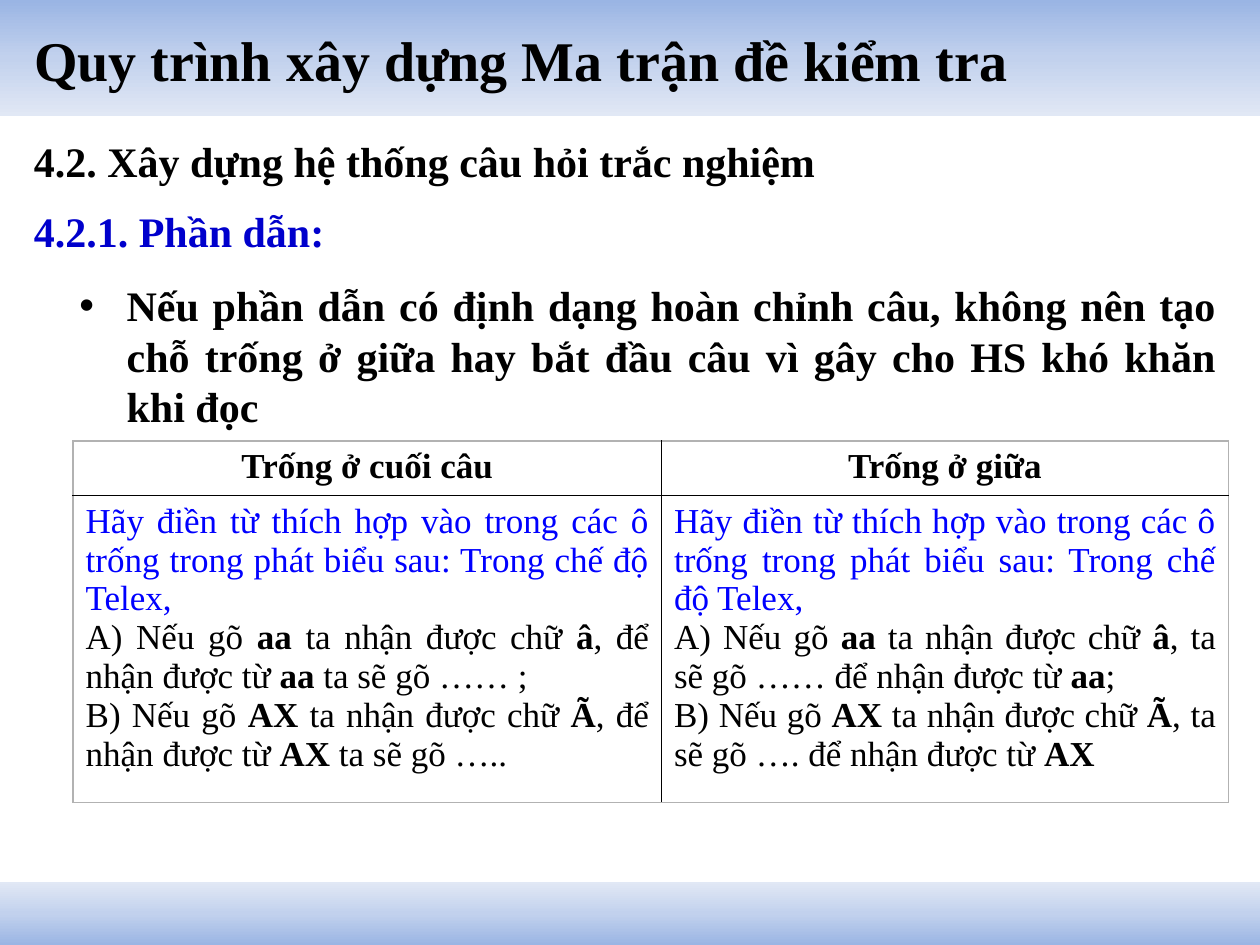
from copy import deepcopy
from dataclasses import dataclass

from lxml import etree
from pptx import Presentation
from pptx.dml.color import RGBColor
from pptx.enum.shapes import MSO_SHAPE
from pptx.enum.text import MSO_ANCHOR, MSO_AUTO_SIZE, PP_ALIGN
from pptx.oxml.ns import qn
from pptx.util import Inches, Pt

RECTANGLE = MSO_SHAPE.RECTANGLE
MIDDLE = MSO_ANCHOR.MIDDLE
NO_FIT = MSO_AUTO_SIZE.NONE
LEFT, CENTER, JUSTIFY = PP_ALIGN.LEFT, PP_ALIGN.CENTER, PP_ALIGN.JUSTIFY

FONT = "Times New Roman"
BLACK = RGBColor(0x00, 0x00, 0x00)
HEADING_BLUE = RGBColor(0x00, 0x00, 0xCC)
PROMPT_BLUE = RGBColor(0x00, 0x00, 0xFF)
FRAME_GRAY = RGBColor(0xB2, 0xB2, 0xB2)
BAND_COLORS = (
    RGBColor(0x9A, 0xB5, 0xE4),
    RGBColor(0xC2, 0xD1, 0xED),
    RGBColor(0xE1, 0xE8, 0xF5),
)

PROMPT = ("Hãy điền từ thích hợp vào trong các ô trống trong phát biểu sau: "
          "Trong chế độ Telex,")


@dataclass(frozen=True)
class Band:
    top: float
    height: float
    angle: int


@dataclass(frozen=True)
class Heading:
    text: str
    top: float
    width: float
    color: RGBColor


@dataclass(frozen=True)
class Example:
    title: str
    width: float
    answers: tuple[str, ...]


BANDS = (Band(0, 0.92, 270), Band(7, 0.5, 90))
HEADINGS = (
    Heading("4.2. Xây dựng hệ thống câu hỏi trắc nghiệm", 1.03, 9.75, BLACK),
    Heading("4.2.1. Phần dẫn:", 1.58, 9.67, HEADING_BLUE),
)
EXAMPLES = (
    Example("Trống ở cuối câu", 4.67, (
        "A) Nếu gõ *aa* ta nhận được chữ *â*, để nhận được từ *aa* ta sẽ gõ …… ;",
        "B) Nếu gõ *AX* ta nhận được chữ *Ã*, để nhận được từ *AX* ta sẽ gõ …..",
    )),
    Example("Trống ở giữa", 4.5, (
        "A) Nếu gõ *aa* ta nhận được chữ *â*, ta sẽ gõ …… để nhận được từ *aa*;",
        "B) Nếu gõ *AX* ta nhận được chữ *Ã*, ta sẽ gõ …. để nhận được từ *AX*",
    )),
)


def write(paragraph, text: str, *, size: float, color: RGBColor = BLACK,
          bold: bool = False, align=LEFT) -> None:
    paragraph.alignment = align
    paragraph.space_before = Pt(0)
    for index, piece in enumerate(text.split("*")):
        if piece:
            run = paragraph.add_run()
            run.text = piece
            run.font.name = FONT
            run.font.size = Pt(size)
            run.font.color.rgb = color
            run.font.bold = bold or index % 2 == 1


def place(shape, left: float, top: float, width: float, height: float) -> None:
    shape.left, shape.top = Inches(left), Inches(top)
    shape.width, shape.height = Inches(width), Inches(height)


def draw_band(slide, band: Band) -> None:
    shape = slide.shapes.add_shape(
        RECTANGLE, 0, Inches(band.top), Inches(10), Inches(band.height))
    shape.shadow.inherit = False
    shape.line.fill.background()
    shape.fill.gradient()
    shape.fill.gradient_angle = band.angle
    stop_list = shape.fill._fill._gradFill.find(qn("a:gsLst"))
    stop_list.insert(1, deepcopy(stop_list[0]))
    for index, (stop, color) in enumerate(zip(shape.fill.gradient_stops, BAND_COLORS)):
        stop.position = index / 2
        stop.color.rgb = color


def draw_heading(slide, heading: Heading) -> None:
    box = slide.shapes.add_textbox(
        Inches(0.17), Inches(heading.top), Inches(heading.width), Inches(0.5))
    box.text_frame.word_wrap = True
    write(box.text_frame.paragraphs[0], heading.text, size=24,
          color=heading.color, bold=True)


def set_borders(cell, colors: dict[str, RGBColor]) -> None:
    properties = cell._tc.get_or_add_tcPr()
    for index, (side, color) in enumerate(colors.items()):
        line = etree.Element(qn(f"a:{side}"), w=str(Pt(1)))
        fill = etree.SubElement(line, qn("a:solidFill"))
        etree.SubElement(fill, qn("a:srgbClr"), val=str(color))
        properties.insert(index, line)


def draw_examples(slide, examples: tuple[Example, ...]) -> None:
    comparison = slide.shapes.add_table(
        2, len(examples), Inches(0.58), Inches(3.5), Inches(9.17), Inches(2.87))
    table = comparison.table
    table.first_row = table.horz_banding = False
    table.rows[0].height, table.rows[1].height = Inches(0.42), Inches(2.04)
    last = len(examples) - 1
    for column, example in enumerate(examples):
        table.columns[column].width = Inches(example.width)
        header, content = table.cell(0, column), table.cell(1, column)
        write(header.text_frame.paragraphs[0], example.title,
              size=20, bold=True, align=CENTER)
        frame = content.text_frame
        write(frame.paragraphs[0], PROMPT, size=20, color=PROMPT_BLUE, align=JUSTIFY)
        for answer in example.answers:
            write(frame.add_paragraph(), answer, size=20, align=JUSTIFY)
        for row, cell in enumerate((header, content)):
            cell.fill.background()
            set_borders(cell, {
                "lnL": FRAME_GRAY if column == 0 else BLACK,
                "lnR": FRAME_GRAY if column == last else BLACK,
                "lnT": FRAME_GRAY if row == 0 else BLACK,
                "lnB": FRAME_GRAY if row == 1 else BLACK,
            })
    comparison.height = Inches(2.87)


def main() -> None:
    deck = Presentation()
    deck.slide_width, deck.slide_height = Inches(10), Inches(7.5)
    slide = deck.slides.add_slide(deck.slide_layouts[1])
    title, advice = slide.placeholders
    for band in BANDS:
        draw_band(slide, band)
    for placeholder in (title, advice):
        slide.shapes._spTree.append(placeholder._element)

    place(title, 0.17, 0.02, 9.67, 0.9)
    title.text_frame.auto_size = NO_FIT
    title.text_frame.vertical_anchor = MIDDLE
    write(title.text_frame.paragraphs[0], "Quy trình xây dựng Ma trận đề kiểm tra",
          size=32, bold=True)

    place(advice, 0.53, 2.17, 9.22, 1.25)
    advice.text_frame.auto_size = NO_FIT
    write(advice.text_frame.paragraphs[0],
          "Nếu phần dẫn có định dạng hoàn chỉnh câu, không nên tạo chỗ trống ở giữa "
          "hay bắt đầu câu vì gây cho HS khó khăn khi đọc",
          size=24, bold=True, align=JUSTIFY)

    for heading in HEADINGS:
        draw_heading(slide, heading)
    draw_examples(slide, EXAMPLES)
    deck.save("out.pptx")


if __name__ == "__main__":
    main()
